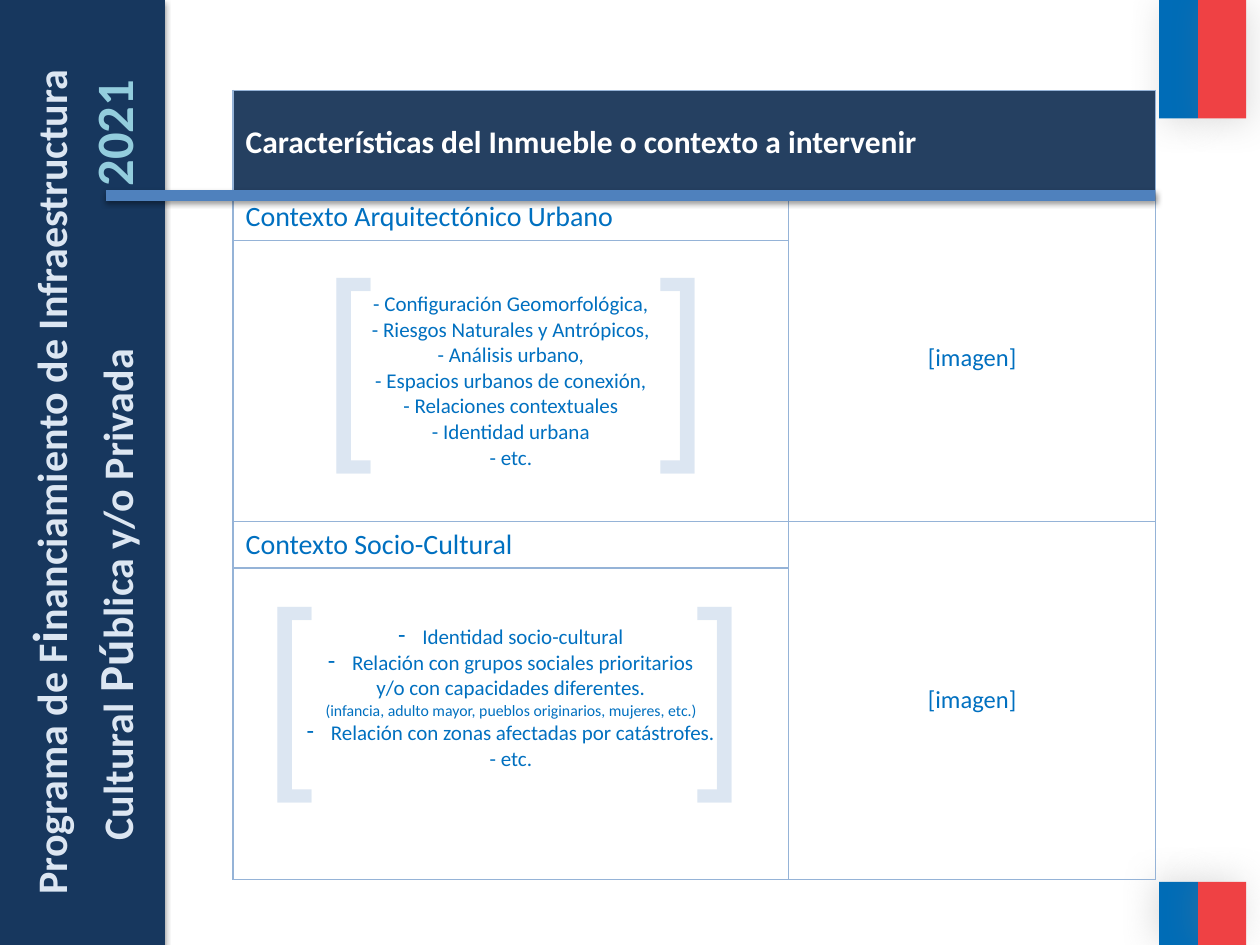
import pptx
import pptx.dml.color
import pptx.enum.shapes
import pptx.enum.text
import pptx.oxml
import pptx.oxml.ns
import pptx.util

Pt = pptx.util.Pt
ALIGN = pptx.enum.text.PP_ALIGN
ANCHOR = pptx.enum.text.MSO_ANCHOR
NAMESPACE = pptx.oxml.ns.nsdecls("a")

COLOURS = {
    "navy": "17375E", "header": "254061", "border": "95B3D7", "text": "0070C0",
    "pale": "DCE6F2", "year": "93CDDD", "rule": "4F81BD", "white": "FFFFFF",
    "flag blue": "006CB7", "flag red": "EF4144", "grey": "808080", "black": "000000",
}
GRID_COLUMNS, GRID_ROWS = 100, 75


class SlideBuilder:
    """Holds the style and the current slide; lengths are grid columns and rows."""

    font = "Calibri"

    def __init__(self, presentation):
        self.slide = presentation.slides.add_slide(presentation.slide_layouts[6])
        self.column = presentation.slide_width / GRID_COLUMNS
        self.row = presentation.slide_height / GRID_ROWS

    def x(self, columns):
        return round(columns * self.column)

    def y(self, rows):
        return round(rows * self.row)

    def box(self, left, top, width, height):
        return self.x(left), self.y(top), self.x(width), self.y(height)

    def colour(self, name):
        return pptx.dml.color.RGBColor.from_string(COLOURS[name])

    def shadow(self, shape, colour, alpha, blur, distance, angle):
        properties = shape._element.spPr
        for old in properties.findall(pptx.oxml.ns.qn("a:effectLst")):
            properties.remove(old)
        properties.append(pptx.oxml.parse_xml(
            f'<a:effectLst {NAMESPACE}><a:outerShdw blurRad="{Pt(blur)}" dist="{Pt(distance)}" '
            f'dir="{angle * 60000}" algn="ctr" rotWithShape="0">'
            f'<a:srgbClr val="{COLOURS[colour]}"><a:alpha val="{alpha * 1000}"/></a:srgbClr>'
            f'</a:outerShdw></a:effectLst>'))

    def rectangle(self, box, colour, shadow):
        shape = self.slide.shapes.add_shape(
            pptx.enum.shapes.MSO_SHAPE.RECTANGLE, *self.box(*box))
        shape.fill.solid()
        shape.fill.fore_color.rgb = self.colour(colour)
        shape.line.fill.background()
        self.shadow(shape, *shadow)

    def line(self, start, end, colour, width, shadow):
        connector = self.slide.shapes.add_connector(
            pptx.enum.shapes.MSO_CONNECTOR.STRAIGHT,
            self.x(start[0]), self.y(start[1]), self.x(end[0]), self.y(end[1]))
        connector.line.color.rgb = self.colour(colour)
        connector.line.width = Pt(width)
        self.shadow(connector, *shadow)

    def run(self, paragraph, text, size, colour, bold=False, font=None):
        run = paragraph.add_run()
        run.text = text
        run.font.name = font or self.font
        run.font.size = Pt(size)
        run.font.bold = bold
        run.font.color.rgb = self.colour(colour)

    def tab_stop(self, paragraph, columns):
        paragraph._p.get_or_add_pPr().append(pptx.oxml.parse_xml(
            f'<a:tabLst {NAMESPACE}><a:tab pos="{self.x(columns)}" algn="l"/></a:tabLst>'))

    def text(self, box, runs, align=ALIGN.LEFT, rotation=0, indent=1, tab=None, **style):
        """Each run is (text, size, colour); indent is the left inset."""
        shape = self.slide.shapes.add_textbox(*self.box(*box))
        shape.rotation = rotation
        frame = shape.text_frame
        frame.word_wrap = True
        frame.margin_left = self.x(indent)
        paragraph = frame.paragraphs[0]
        paragraph.alignment = align
        if tab:
            self.tab_stop(paragraph, tab)
        for run in runs:
            self.run(paragraph, *run, **style)

    def brackets(self, box, gap):
        self.text(box, [("[\t]", 120, "pale")], tab=gap, font="Arial Narrow")

    def table(self, left, top, columns, rows):
        frame = self.slide.shapes.add_table(
            len(rows), len(columns), *self.box(left, top, sum(columns), sum(rows)))
        table = frame.table
        table.first_row = table.horz_banding = False
        for column, width in zip(table.columns, columns):
            column.width = self.x(width)
        for row, height in zip(table.rows, rows):
            row.height = self.y(height)
        for cell in table.iter_cells():
            properties = cell._tc.get_or_add_tcPr()
            for side in ("lnL", "lnR", "lnT", "lnB"):
                properties.append(pptx.oxml.parse_xml(
                    f'<a:{side} {NAMESPACE} w="{Pt(1)}"><a:solidFill>'
                    f'<a:srgbClr val="{COLOURS["border"]}"/></a:solidFill></a:{side}>'))
            cell.fill.background()
        return table

    def cell(self, cell, lines, size, colour="text", bold=False, align=ALIGN.LEFT,
             anchor=ANCHOR.MIDDLE, small=(), bulleted=()):
        """Fill a cell; small and bulleted are the indexes of lines so styled."""
        cell.vertical_anchor = anchor
        frame = cell.text_frame
        for index, text in enumerate(lines):
            paragraph = frame.add_paragraph() if index else frame.paragraphs[0]
            paragraph.alignment = align
            self.run(paragraph, text, 9 if index in small else size, colour, bold)
            if index in bulleted:
                properties = paragraph._p.get_or_add_pPr()
                properties.set("marL", str(self.x(1.9)))
                properties.set("indent", str(self.x(-1.9)))
                properties.append(pptx.oxml.parse_xml(f'<a:buChar {NAMESPACE} char="-"/>'))


def build_flags(builder):
    for top, height, angle in ((0, 9.4, 45), (70, 5, 215)):
        for left, width, colour in ((92, 3.1, "flag blue"), (95.1, 3.8, "flag red")):
            builder.rectangle((left, top, width, height), colour, ("grey", 25, 20, 3, angle))


def build_table(builder):
    table = builder.table(18.5, 7.2, (44.1, 29.1), (8.2, 3.7, 22.3, 3.7, 24.7))
    header = table.cell(0, 0)
    header.merge(table.cell(0, 1))
    header.fill.solid()
    header.fill.fore_color.rgb = builder.colour("header")
    builder.cell(header, ["Características del Inmueble o contexto a intervenir"],
                 18, "white", bold=True)
    for row, title in ((1, "Contexto Arquitectónico Urbano"), (3, "Contexto Socio-Cultural")):
        builder.cell(table.cell(row, 0), [title], 16, anchor=ANCHOR.TOP)
        image = table.cell(row, 1)
        image.merge(table.cell(row + 1, 1))
        builder.cell(image, ["[imagen]"], 14, align=ALIGN.CENTER)
    builder.cell(table.cell(2, 0), [
        "- Configuración Geomorfológica,",
        "- Riesgos Naturales y Antrópicos,",
        "- Análisis urbano,",
        "- Espacios urbanos de conexión,",
        "- Relaciones contextuales",
        "- Identidad urbana",
        "- etc.",
    ], 12, align=ALIGN.CENTER)
    social = table.cell(4, 0)
    social.margin_top = builder.y(4.5)
    builder.cell(social, [
        "Identidad socio-cultural",
        "Relación con grupos sociales prioritarios",
        "y/o con capacidades diferentes.",
        "(infancia, adulto mayor, pueblos originarios, mujeres, etc.)",
        "Relación con zonas afectadas por catástrofes.",
        "- etc.",
    ], 12, align=ALIGN.CENTER, anchor=ANCHOR.TOP, small=(3,), bulleted=(0, 1, 4))


def build_sidebar_title(builder):
    builder.text((-31.4, 36.9, 70.4, 5.7), [
        ("Programa de F", 24, "pale"), ("i", 28, "pale"),
        ("nanciamiento de Infraestructura", 24, "pale"),
    ], align=ALIGN.RIGHT, rotation=270, bold=True)
    builder.text((-26.2, 36.8, 70.3, 6.1), [
        ("Cultural", 24, "pale"), (" Pú", 28, "pale"),
        ("blica y/o Privada\t", 24, "pale"), ("2021", 30, "year"),
    ], rotation=270, indent=8.3, tab=51.9, bold=True)


def main():
    presentation = pptx.Presentation()
    presentation.slide_width = pptx.util.Inches(10)
    presentation.slide_height = pptx.util.Inches(7.5)
    builder = SlideBuilder(presentation)
    build_flags(builder)
    builder.brackets((20.1, 43.1, 41.7, 21.2), gap=34.2)
    builder.brackets((24.8, 17, 34.6, 21.2), gap=26.6)
    builder.rectangle((0, 0, 13.1, 75), "navy", ("black", 35, 3.1, 1.8, 90))
    build_table(builder)
    builder.line((91.7, 15.5), (8.4, 15.5), "rule", 6, ("black", 38, 3.1, 1.6, 90))
    build_sidebar_title(builder)
    presentation.save("out.pptx")


if __name__ == "__main__":
    main()
